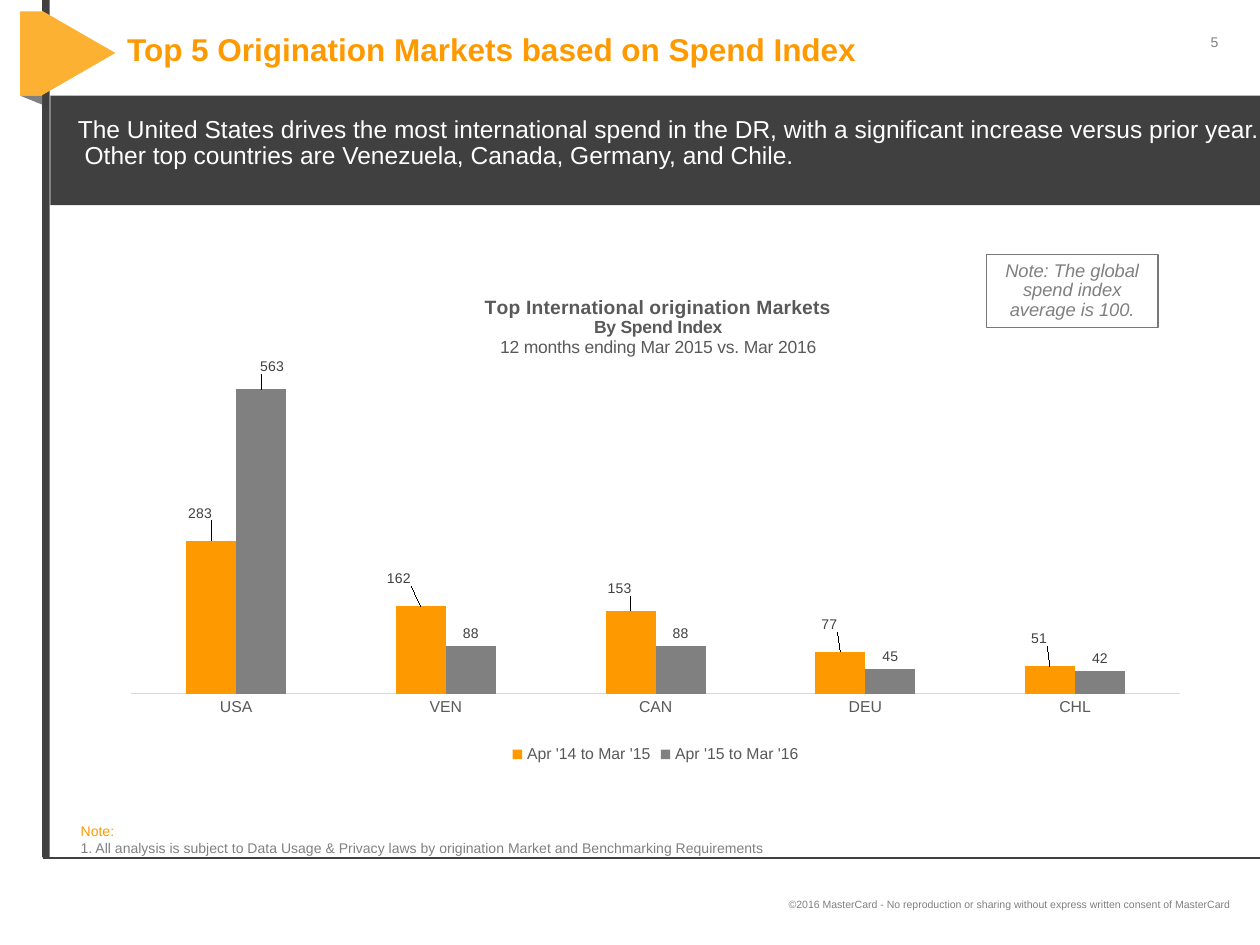
from lxml import etree
from pptx import Presentation
from pptx import util as u
from pptx.chart.data import CategoryChartData
from pptx.dml.color import RGBColor
from pptx.enum import chart as ch, shapes, text
from pptx.oxml import ns, parse_xml

ORANGE = RGBColor(0xFF, 0x99, 0x00)
AMBER = RGBColor(0xFC, 0xB1, 0x33)
DARK = RGBColor(0x40, 0x40, 0x40)
GRAY = RGBColor(0x80, 0x80, 0x80)
MID = RGBColor(0x59, 0x59, 0x59)
PALE = RGBColor(0xD9, 0xD9, 0xD9)
BORDER = RGBColor(0x79, 0x79, 0x79)
WHITE = RGBColor(0xFF, 0xFF, 0xFF)
Pt, KIND, ALIGN, ANCHOR = u.Pt, shapes.MSO_SHAPE, text.PP_ALIGN, text.MSO_ANCHOR


def style(font, size, color, **extra):
    for key, value in {"size": Pt(size), "name": "Arial", **extra}.items():
        setattr(font, key, value)
    font.color.rgb = color


def finish(shape, fill=None, line=None):
    shape.shadow.inherit = False
    if fill is None:
        shape.fill.background()
    else:
        shape.fill.solid()
        shape.fill.fore_color.rgb = fill
    if line is None:
        shape.line.fill.background()
    else:
        shape.line.color.rgb = line
        shape.line.width = Pt(0.75)


prs = Presentation()
prs.slide_width, prs.slide_height = Pt(720), Pt(540)
slide = prs.slides.add_slide(prs.slide_layouts[5])
parts = slide.shapes

for kind, box, turn, color in [
    (KIND.RECTANGLE, (24.1, 0, 4.3, 490), 0, DARK),
    (KIND.ISOSCELES_TRIANGLE, (20.9, 9.4, 48.2, 41.8), 90, AMBER),
    (KIND.RECTANGLE, (11.5, 6.5, 12.6, 48.2), 0, AMBER),
    (KIND.RECTANGLE, (28.8, 54.7, 691.2, 62.6), 0, DARK),
]:
    block = parts.add_shape(kind, *map(Pt, box))
    block.rotation = turn
    finish(block, color)

fold = parts.build_freeform(Pt(11.5), Pt(54.7))
fold.add_line_segments([(Pt(24.1), Pt(54.7)), (Pt(24.1), Pt(59.8))])
finish(fold.convert_to_shape(), GRAY)

rule = parts.add_connector(shapes.MSO_CONNECTOR.STRAIGHT, Pt(24.5), Pt(490.3), Pt(720), Pt(490.3))
rule.line.color.rgb = DARK
rule.line.width = Pt(0.75)
etree.SubElement(rule._element.spPr, ns.qn("a:effectLst"))

title = parts.title
title.left, title.top, title.width, title.height = map(Pt, (65.5, 6.5, 570, 48.2))
title.text_frame.text = "Top 5 Origination Markets based on Spend Index"
for key, value in {"vertical_anchor": ANCHOR.MIDDLE, "auto_size": text.MSO_AUTO_SIZE.NONE}.items():
    setattr(title.text_frame, key, value)
heading = title.text_frame.paragraphs[0]
heading.alignment = ALIGN.LEFT
heading.line_spacing = Pt(16)
style(heading.font, 18, ORANGE, bold=True)

page_number = parts.add_textbox(*map(Pt, (681.8, 15.8, 24.5, 17.3)))
copyright_line = parts.add_textbox(*map(Pt, (7.9, 497.5, 702, 38.9)))
message = parts.add_textbox(*map(Pt, (37.4, 63.4, 690.5, 38.2)))
footnote = parts.add_shape(KIND.ROUNDED_RECTANGLE, *map(Pt, (37.4, 461.5, 663.8, 33.1)))
index_note = parts.add_shape(KIND.RECTANGLE, *map(Pt, (563.8, 145.4, 97.9, 41.8)))
finish(footnote)
finish(index_note, line=BORDER)

for holder, anchor, align, spacing, size, italic, lines in [
    (page_number, ANCHOR.TOP, ALIGN.CENTER, 1, 8, False, [("5", GRAY)]),
    (copyright_line, ANCHOR.MIDDLE, ALIGN.RIGHT, 1, 6, False,
     [("©2016 MasterCard - No reproduction or sharing without express written consent of MasterCard", GRAY)]),
    (message, ANCHOR.TOP, ALIGN.LEFT, 0.9, 14, False,
     [("The United States drives the most international spend in the DR, with a significant increase "
       "versus prior year.  Other top countries are Venezuela, Canada, Germany, and Chile.", WHITE)]),
    (footnote, ANCHOR.BOTTOM, ALIGN.LEFT, 1, 8, False,
     [("Note:", ORANGE),
      ("1. All analysis is subject to Data Usage & Privacy laws by origination Market "
       "and Benchmarking Requirements", GRAY)]),
    (index_note, ANCHOR.MIDDLE, ALIGN.CENTER, 0.9, 10.5, True,
     [("Note: The global spend index average is 100.", GRAY)]),
]:
    frame = holder.text_frame
    frame.word_wrap = True
    frame.vertical_anchor = anchor
    frame.text = "\n".join(words for words, _ in lines)
    for paragraph, (_, color) in zip(frame.paragraphs, lines):
        paragraph.alignment = align
        paragraph.line_spacing = spacing
        style(paragraph.font, size, color, italic=italic)

spend = CategoryChartData()
spend.categories = ["USA", "VEN", "CAN", "DEU", "CHL"]
spend.add_series("Apr '14 to Mar '15", (283, 162, 153, 77, 51))
spend.add_series("Apr '15 to Mar '16", (563, 88, 88, 45, 42))
chart = parts.add_chart(ch.XL_CHART_TYPE.COLUMN_CLUSTERED, *map(Pt, (62.6, 154.1, 624.2, 285.1)), spend).chart
style(chart.font, 10, RGBColor(0, 0, 0))

chart.has_title = True
caption = chart.chart_title.text_frame
caption.text = "Top International origination Markets\nBy Spend Index\n12 months ending Mar 2015 vs. Mar 2016"
for paragraph, (size, bold) in zip(caption.paragraphs, [(11, True), (10, True), (10, False)]):
    style(paragraph.runs[0].font, size, MID, bold=bold)

chart.has_legend = True
chart.legend.position = ch.XL_LEGEND_POSITION.BOTTOM
chart.legend.include_in_layout = False
style(chart.legend.font, 9, MID)

markets, index_axis = chart.category_axis, chart.value_axis
markets.major_tick_mark = ch.XL_TICK_MARK.NONE
markets.format.line.color.rgb = PALE
markets.format.line.width = Pt(0.75)
style(markets.tick_labels.font, 9, MID)
for key, value in {"visible": False, "has_major_gridlines": False,
                   "minimum_scale": 0, "maximum_scale": 600}.items():
    setattr(index_axis, key, value)

columns = chart.plots[0]
for key, value in {"gap_width": 219, "overlap": 0, "vary_by_categories": False}.items():
    setattr(columns, key, value)

layouts = []
label_shifts = [
    [(-0.01, -0.03), (-0.02, -0.03), (-0.01, -0.02), (-0.01, -0.03), (-0.01, -0.03)],
    [(0.01, -0.02)],
]
for series, color, shifts in zip(columns.series, (ORANGE, GRAY), label_shifts):
    series.format.fill.solid()
    series.format.fill.fore_color.rgb = color
    labels = series.data_labels
    for key, value in {"show_value": True, "number_format": "#,##0", "number_format_is_linked": False,
                       "position": ch.XL_LABEL_POSITION.OUTSIDE_END}.items():
        setattr(labels, key, value)
    style(labels.font, 8, DARK)
    for i, _ in enumerate(shifts):
        label = series.points[i].data_label
        style(label.font, 8, DARK)
        label.position = ch.XL_LABEL_POSITION.OUTSIDE_END
    label_ids = series._element.findall(".//" + ns.qn("c:dLbl") + "/" + ns.qn("c:idx"))
    layouts += [(idx, {"x": x, "y": y}) for idx, (x, y) in zip(label_ids, shifts)]

chart_xml = chart._chartSpace.chart
layouts.append((chart_xml.find(ns.qn("c:title")).find(ns.qn("c:tx")),
                {"xMode": "edge", "yMode": "edge", "x": 0.34, "y": 0.04}))
plot_area = chart_xml.plotArea
for old in plot_area.findall(ns.qn("c:layout")) + chart_xml.findall(ns.qn("c:title") + "/" + ns.qn("c:layout")):
    old.getparent().remove(old)
layouts.append((None, {"layoutTarget": "inner", "xMode": "edge", "yMode": "edge",
                       "x": 0.02, "y": 0.2, "w": 0.96, "h": 0.65}))
for before, values in layouts:
    layout = parse_xml(f"<c:layout {ns.nsdecls('c')}><c:manualLayout/></c:layout>")
    for key, value in values.items():
        etree.SubElement(layout[0], ns.qn("c:" + key)).set("val", str(value))
    if before is None:
        plot_area.insert(0, layout)
    else:
        before.addnext(layout)

prs.save("out.pptx")
